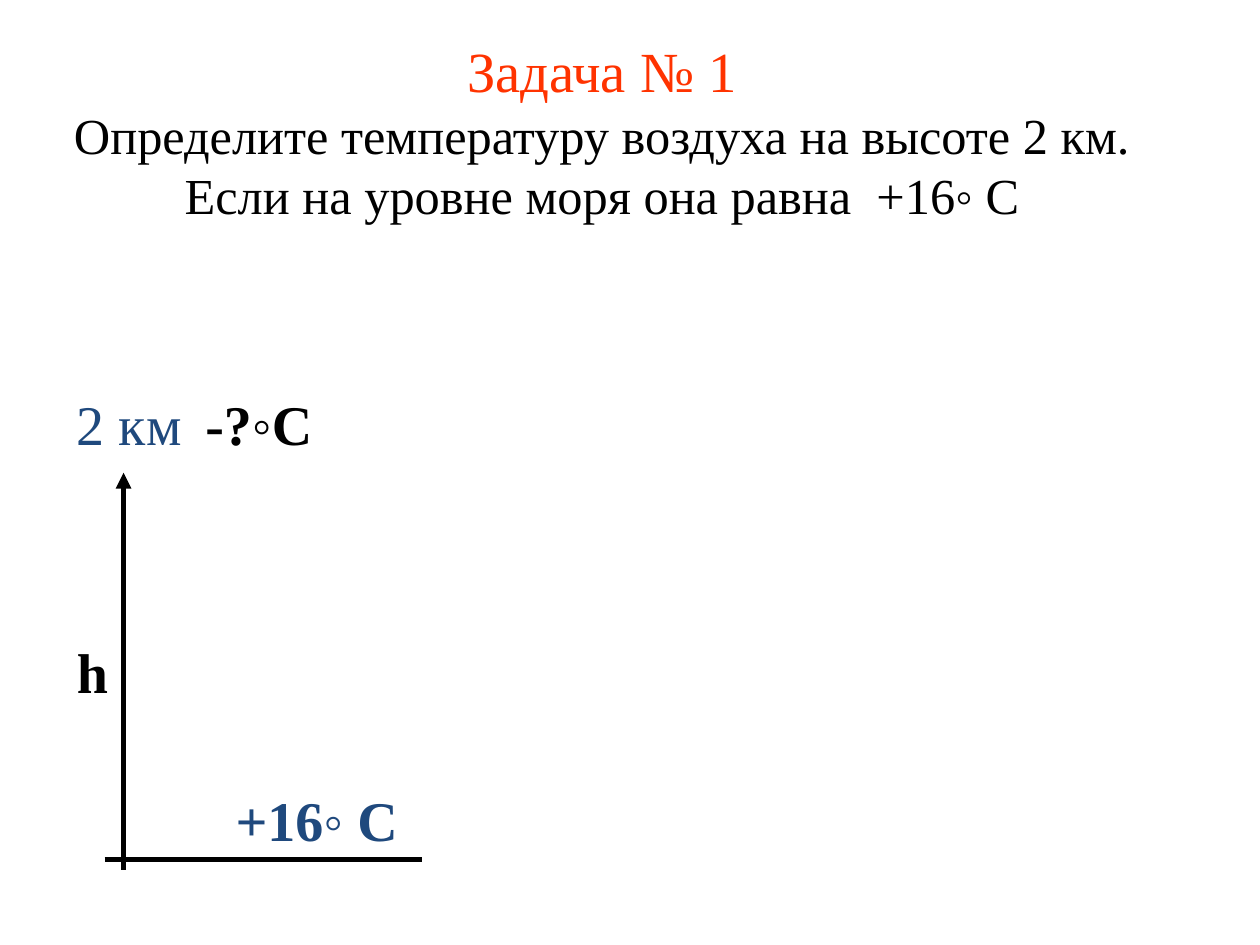
"""Build the slide with the air temperature problem and its height diagram."""
from dataclasses import dataclass

from lxml import etree
from pptx import Presentation
from pptx.dml.color import RGBColor
from pptx.enum import shapes, text
from pptx.oxml import ns
from pptx.util import Cm, Pt


@dataclass(frozen=True)
class Theme:
    font: str = "Times New Roman"
    red: str = "FF3300"
    black: str = "000000"
    blue: str = "1F497D"
    heading: float = 32.4
    body: float = 28.8
    label: float = 32
    line: float = 3


theme = Theme()


def add_run(p, words, size, color, bold=False):
    r = p.add_run()
    r.text = words
    r.font.name = theme.font
    r.font.size = Pt(size)
    r.font.bold = bold
    r.font.color.rgb = RGBColor.from_string(color)


prs = Presentation()
prs.slide_width, prs.slide_height = Cm(25.4), Cm(19.05)
s = prs.slides.add_slide(prs.slide_layouts[5])

title = s.shapes.title
title.left, title.top, title.width, title.height = Cm(0.71), Cm(0.53), Cm(22.86), Cm(4.19)
tf = title.text_frame
tf.auto_size = text.MSO_AUTO_SIZE.NONE
tf.vertical_anchor = text.MSO_ANCHOR.MIDDLE
p = tf.paragraphs[0]
p.alignment = text.PP_ALIGN.CENTER
add_run(p, "Задача № 1", theme.heading, theme.red)
p.add_line_break()
add_run(
    p,
    "Определите температуру воздуха на высоте 2 км. Если на уровне моря она равна  +16◦ С",
    theme.body,
    theme.black,
)

labels = [
    ("2 км", 1.3, 7.72, 2.64, theme.blue, False),
    ("-?◦С", 3.89, 7.72, 2.79, theme.black, True),
    ("+16◦ С", 4.5, 15.72, 3.81, theme.blue, True),
    ("h", 1.3, 12.73, 1.14, theme.black, True),
]
for words, left, top, width, color, bold in labels:
    sp = s.shapes.add_textbox(Cm(left), Cm(top), Cm(width), Cm(1.62))
    tf = sp.text_frame
    tf.word_wrap = False
    tf.auto_size = text.MSO_AUTO_SIZE.SHAPE_TO_FIT_TEXT
    add_run(tf.paragraphs[0], words, theme.label, color, bold)

axes = [
    ((2.11, 17.32), (8.51, 17.32), False),
    ((2.49, 17.53), (2.49, 9.53), True),
]
for start, end, arrow in axes:
    line = s.shapes.add_connector(
        shapes.MSO_CONNECTOR.STRAIGHT, *(Cm(v) for v in start + end)
    )
    line.line.width = Pt(theme.line)
    line.line.color.rgb = RGBColor.from_string(theme.black)
    props = line._element.spPr
    if arrow:
        etree.SubElement(props.find(ns.qn("a:ln")), ns.qn("a:tailEnd"), type="triangle")
    etree.SubElement(props, ns.qn("a:effectLst"))

prs.save("out.pptx")
